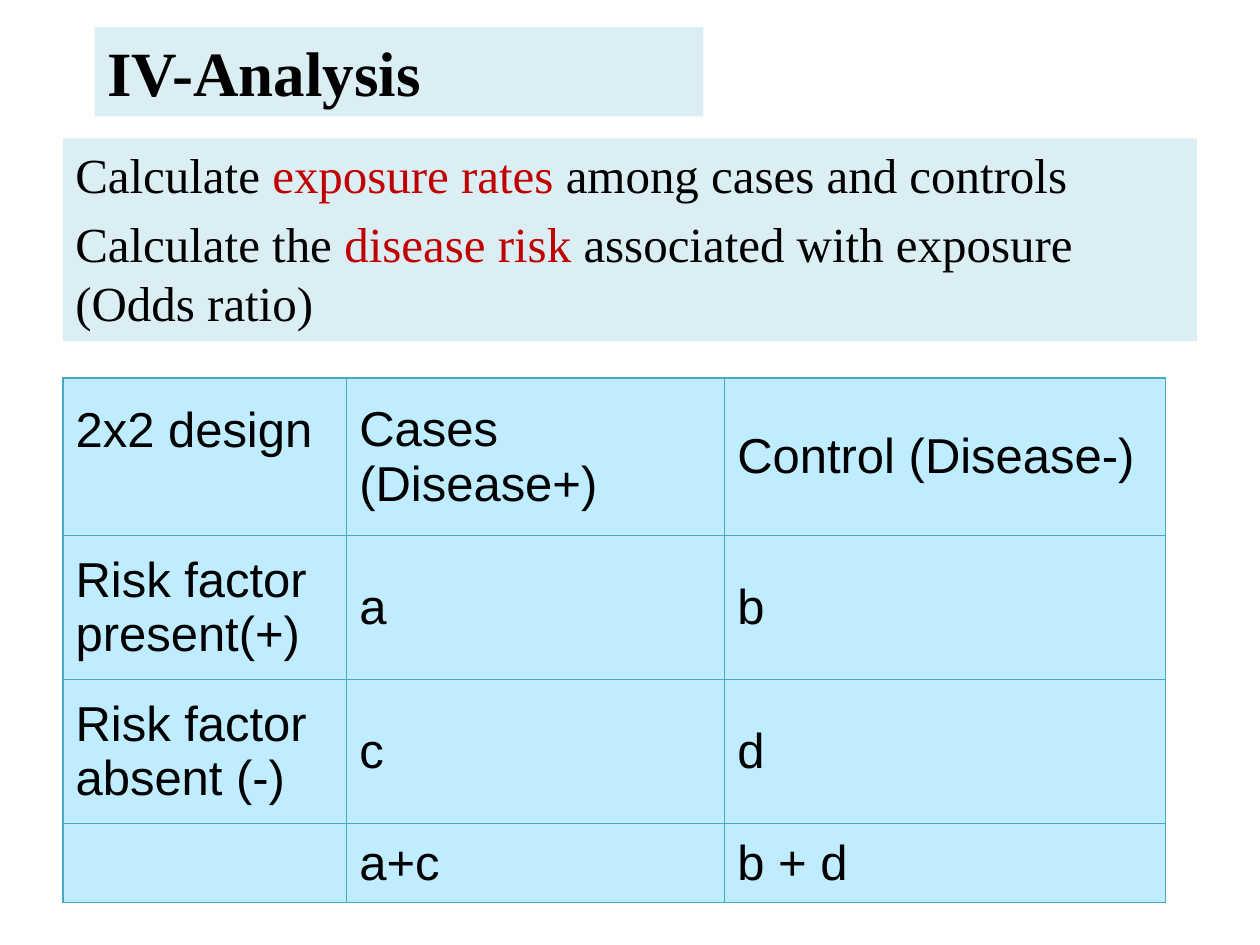
import dataclasses

import lxml.etree
import pptx
import pptx.dml.color
import pptx.enum.shapes
import pptx.enum.text
import pptx.oxml.ns
import pptx.util
from pptx.util import Cm


@dataclasses.dataclass(frozen=True)
class Theme:
    panel: str = "DBEEF4"
    cell: str = "BFECFF"
    border: str = "46AAC5"
    ink: str = "000000"
    accent: str = "C00000"
    serif: str = "Times New Roman"
    sans: str = "Arial"
    title_size: float = 36
    body_size: float = 28
    paragraph_gap: float = 5.6
    border_width: float = 0.75


def rgb(value):
    return pptx.dml.color.RGBColor.from_string(value)


def write(paragraph, text, *, font, size, color, bold=False):
    run = paragraph.add_run()
    run.text = text
    run.font.name = font
    run.font.size = pptx.util.Pt(size)
    run.font.bold = bold
    run.font.color.rgb = rgb(color)


class SlideBuilder:
    """Draws panels and tables on one slide in a shared theme."""

    def __init__(self, slide, theme):
        self.slide = slide
        self.theme = theme

    def panel(self, left, top, width, height, paragraphs, size, bold=False):
        panel = self.slide.shapes.add_shape(
            pptx.enum.shapes.MSO_SHAPE.RECTANGLE, Cm(left), Cm(top), Cm(width), Cm(height))
        panel.shadow.inherit = False
        panel.fill.solid()
        panel.fill.fore_color.rgb = rgb(self.theme.panel)
        panel.line.fill.background()
        frame = panel.text_frame
        frame.word_wrap = True
        frame.vertical_anchor = pptx.enum.text.MSO_ANCHOR.TOP
        for index, pieces in enumerate(paragraphs):
            paragraph = frame.add_paragraph() if index else frame.paragraphs[0]
            paragraph.alignment = pptx.enum.text.PP_ALIGN.LEFT
            if index:
                paragraph.space_before = pptx.util.Pt(self.theme.paragraph_gap)
            for text, color in pieces:
                write(paragraph, text, font=self.theme.serif, size=size, color=color, bold=bold)

    def border(self, cell):
        properties = cell._tc.get_or_add_tcPr()
        qn = pptx.oxml.ns.qn
        for position, side in enumerate(("a:lnL", "a:lnR", "a:lnT", "a:lnB")):
            line = lxml.etree.Element(qn(side), w=str(pptx.util.Pt(self.theme.border_width)))
            fill = lxml.etree.SubElement(line, qn("a:solidFill"))
            lxml.etree.SubElement(fill, qn("a:srgbClr"), val=self.theme.border)
            properties.insert(position, line)

    def table(self, left, top, column_widths, row_heights, rows):
        table = self.slide.shapes.add_table(
            len(row_heights), len(column_widths), Cm(left), Cm(top),
            Cm(sum(column_widths)), Cm(sum(row_heights))).table
        table.first_row = table.horz_banding = False
        for column, width in zip(table.columns, column_widths):
            column.width = Cm(width)
        for row, height, texts in zip(table.rows, row_heights, rows):
            row.height = Cm(height)
            for cell, text in zip(row.cells, texts):
                cell.fill.solid()
                cell.fill.fore_color.rgb = rgb(self.theme.cell)
                cell.vertical_anchor = pptx.enum.text.MSO_ANCHOR.MIDDLE
                self.border(cell)
                if text:
                    write(cell.text_frame.paragraphs[0], text, font=self.theme.sans,
                          size=self.theme.body_size, color=self.theme.ink)
        return table


def main():
    theme = Theme()
    presentation = pptx.Presentation()
    presentation.slide_width, presentation.slide_height = Cm(25.4), Cm(19.05)
    builder = SlideBuilder(
        presentation.slides.add_slide(presentation.slide_layouts[6]), theme)

    builder.panel(1.91, 0.55, 12.27, 1.8, [[("IV-Analysis", theme.ink)]],
                  theme.title_size, bold=True)
    analysis_steps = [
        [("Calculate ", theme.ink), ("exposure rates ", theme.accent),
         ("among cases and controls", theme.ink)],
        [("Calculate the ", theme.ink), ("disease risk ", theme.accent),
         ("associated with exposure (Odds ratio)", theme.ink)],
    ]
    builder.panel(1.27, 2.79, 22.86, 4.09, analysis_steps, theme.body_size)

    design = builder.table(1.27, 7.62, [5.72, 7.62, 8.89], [3.18, 2.9, 2.9, 1.6], [
        ["2x2 design", "Cases (Disease+)", "Control (Disease-)"],
        ["Risk factor present(+)", "a", "b"],
        ["Risk factor absent (-)", "c", "d"],
        ["", "a+c", "b + d"],
    ])
    design_heading = design.cell(0, 0)
    design_heading.vertical_anchor = pptx.enum.text.MSO_ANCHOR.TOP
    design_heading.margin_top = Cm(0.5)

    presentation.save("out.pptx")


if __name__ == "__main__":
    main()
